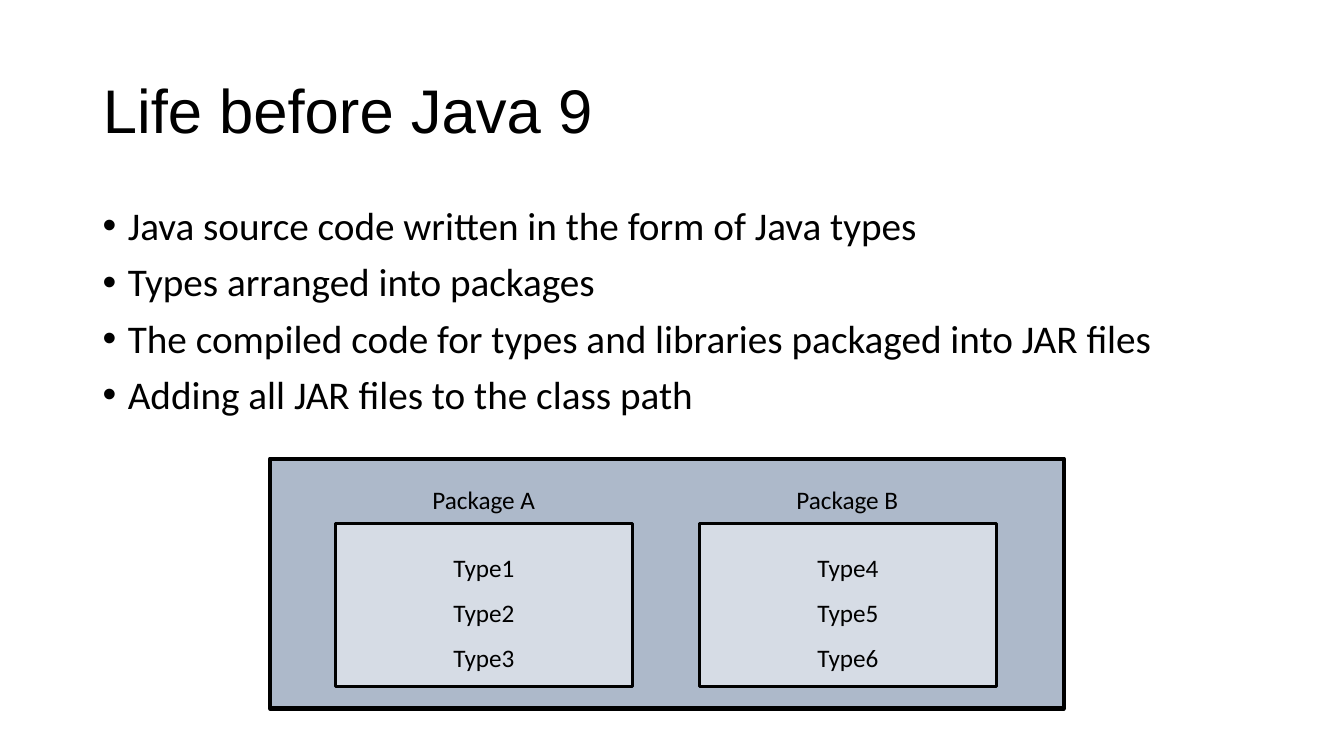
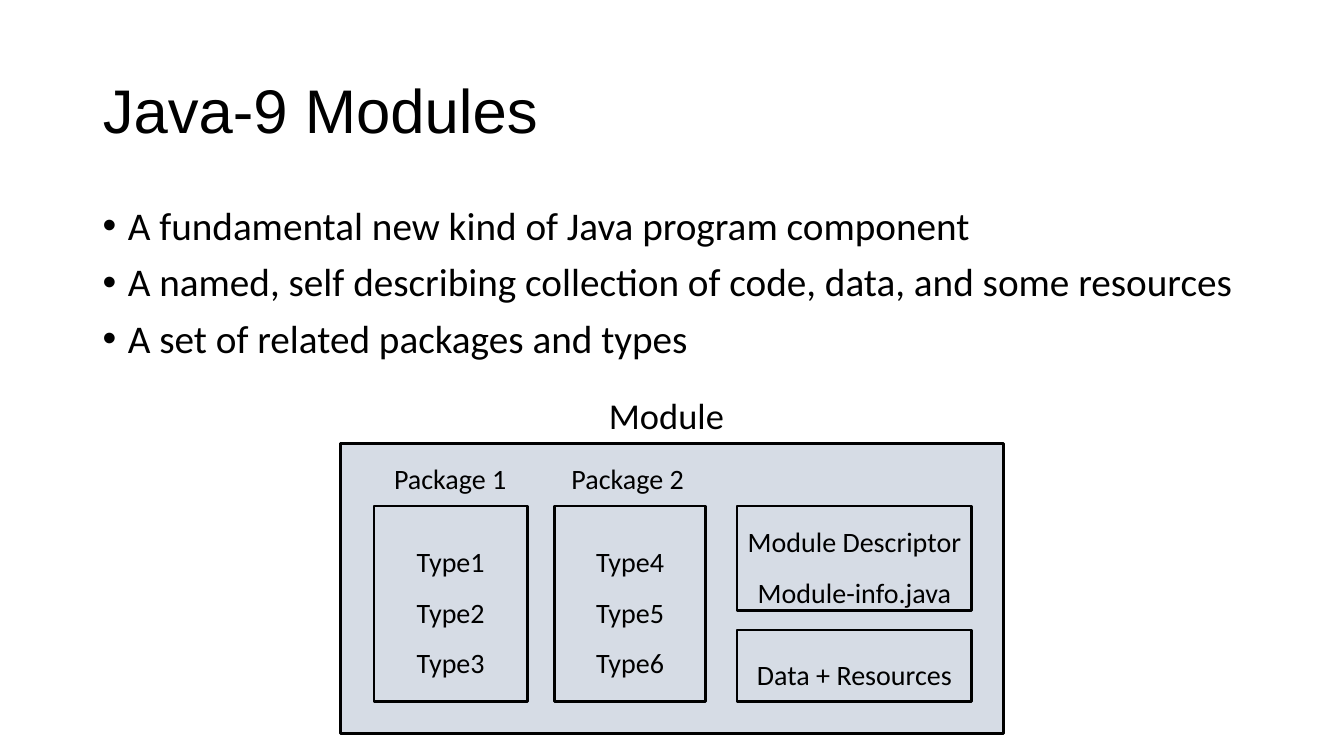
from lxml.etree import SubElement
from pptx import Presentation
from pptx.dml.color import RGBColor as Rgb
from pptx.enum.shapes import MSO_SHAPE as Shape
from pptx.enum.text import MSO_ANCHOR as Anchor, PP_ALIGN as Align
from pptx.oxml.ns import qn
from pptx.util import Inches, Pt

BLACK, STEEL, MIST = "000000", "ADB9CA", "D6DCE5"
TYPES = ("Type1\nType2\nType3", "Type4\nType5\nType6")


def color(code):
    """Turn a hex string into a colour."""
    return Rgb.from_string(code)


class Deck:
    """Hold the shared style and the current slide."""

    head, body = "Arial", "Calibri"

    def __init__(self):
        """Start an empty wide deck."""
        self.prs = Presentation()
        self.prs.slide_width = Inches(13.33)
        self.prs.slide_height = Inches(7.5)

    def font(self, para, size, name):
        """Give every run of a paragraph its font."""
        for run in para.runs:
            run.font.size = Pt(size)
            run.font.name = name
            run.font.color.rgb = color(BLACK)

    def slide(self, title):
        """Add a slide with a left-aligned title."""
        page = self.prs.slides.add_slide(self.prs.slide_layouts[5])
        self.shapes = page.shapes
        box = page.shapes.title
        box.left, box.top = Inches(0.92), Inches(0.4)
        box.width, box.height = Inches(11.5), Inches(1.45)
        frame = box.text_frame
        frame.text = title
        frame.vertical_anchor = Anchor.MIDDLE
        para = frame.paragraphs[0]
        para.alignment = Align.LEFT
        para.line_spacing = 0.9
        self.font(para, 44, self.head)

    def group(self):
        """Put the next elements into one group."""
        self.shapes = self.shapes.add_group_shape().shapes

    def text(self, words, x, y, w, h, size):
        """Add a wrapping text box and return its paragraphs."""
        box = self.shapes.add_textbox(Inches(x), Inches(y), Inches(w), Inches(h))
        frame = box.text_frame
        frame.word_wrap = True
        frame.text = words
        for para in frame.paragraphs:
            self.font(para, size, self.body)
        return frame.paragraphs

    def list(self, items, h):
        """Add the bulleted body text."""
        paras = self.text("\n".join(items), 0.92, 2, 11.5, h, 28)
        for i, para in enumerate(paras):
            props = para._p.get_or_add_pPr()
            props.set("marL", str(Inches(0.25)))
            props.set("indent", str(-Inches(0.25)))
            SubElement(props, qn("a:buFont"), typeface="Arial")
            SubElement(props, qn("a:buChar"), char="•")
            para.line_spacing = 0.9
            para.space_before = Pt(10 if i else 0)

    def box(self, x, y, w, h, fill=None, line=2, words="", size=18):
        """Add an outlined rectangle with centred lines of text."""
        rect = self.shapes.add_shape(
            Shape.RECTANGLE, Inches(x), Inches(y), Inches(w), Inches(h))
        rect.shadow.inherit = False
        if fill:
            rect.fill.solid()
            rect.fill.fore_color.rgb = color(fill)
        else:
            rect.fill.background()
        rect.line.color.rgb = color(BLACK)
        rect.line.width = Pt(line)
        if words:
            frame = rect.text_frame
            frame.text = words
            frame.vertical_anchor = Anchor.MIDDLE
            for para in frame.paragraphs:
                para.alignment = Align.CENTER
                para.line_spacing = 1.5
                self.font(para, size, self.body)


def before(deck):
    """Build the slide on packages and the class path."""
    deck.slide("Life before Java 9")
    deck.list((
        "Java source code written in the form of Java types",
        "Types arranged into packages",
        "The compiled code for types and libraries packaged into JAR files",
        "Adding all JAR files to the class path"), 2.41)
    deck.box(2.68, 4.55, 7.87, 2.48, STEEL, 3)
    for x, name, types in zip((3.33, 6.94), "AB", TYPES):
        deck.box(x, 5.19, 2.94, 1.62, MIST, words=types)
        deck.text(f"Package {name}", x + 0.86, 4.76, 1.3, 0.4, 18)


def modules(deck):
    """Build the slide on the parts of a module."""
    deck.slide("Java-9 Modules")
    deck.list((
        "A fundamental new kind of Java program component",
        "A named, self describing collection of code, data, and some resources",
        "A set of related packages and types"), 1.8)
    deck.group()
    deck.text("Module", 5.94, 3.85, 1.45, 0.54, 26)
    deck.box(3.38, 4.4, 6.57, 2.88, MIST)
    columns = ((3.71, 1.52, 0.1), (5.5, 1.5, 0.07))
    for num, ((x, w, pad), types) in enumerate(zip(columns, TYPES), 1):
        deck.box(x, 5.02, w, 1.94, words=types, size=20)
        deck.text(f"Package {num}", x + pad, 4.53, 1.36, 0.44, 20)
    parts = ((5.02, 1.04, "Module Descriptor\nModule-info.java"),
             (6.25, 0.71, "Data + Resources"))
    for y, h, words in parts:
        deck.box(7.31, y, 2.33, h, words=words, size=20)


def main():
    """Build and save the deck."""
    deck = Deck()
    before(deck)
    modules(deck)
    deck.prs.save("out.pptx")


if __name__ == "__main__":
    main()
